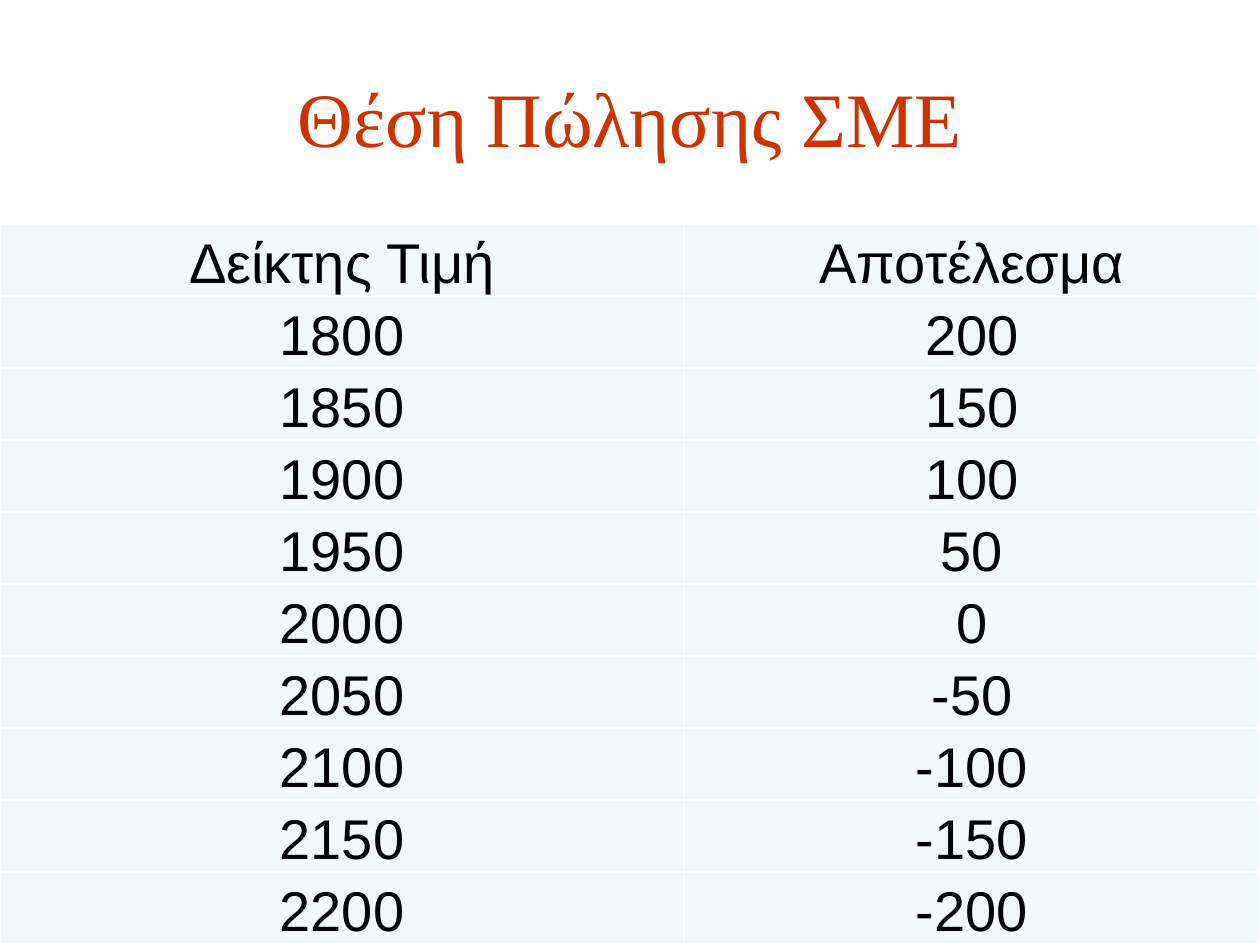
from dataclasses import dataclass

from lxml import etree
from pptx import Presentation
from pptx.dml.color import RGBColor
from pptx.enum.text import MSO_ANCHOR, PP_ALIGN
from pptx.oxml.ns import qn
from pptx.util import Emu, Pt

CENTER = PP_ALIGN.CENTER
MIDDLE = MSO_ANCHOR.MIDDLE
BOTTOM = MSO_ANCHOR.BOTTOM

SCALE = 914400 / 126  # EMU in one px
COLORS = {"title": "CC3300", "text": "000000", "cell": "F3F9FA", "rule": "FFFFFF"}
STRIKE = 2000  # index level at which the short position breaks even


@dataclass
class Style:
    font: str
    size: int
    color: str


@dataclass
class Row:
    index: str
    result: str


HEAD = Style("Times New Roman", 44, "title")
BODY = Style("Arial", 32, "text")
ROWS = [Row("Δείκτης Τιμή", "Αποτέλεσμα")] + [
    Row(str(level), str(STRIKE - level)) for level in range(1800, 2201, 50)
]
COLS = (684, 576)
ROW_H = 72


def px(n: int) -> Emu:
    return Emu(round(n * SCALE))


def rgb(name: str) -> RGBColor:
    return RGBColor.from_string(COLORS[name])


def write(frame, text: str, style: Style) -> None:
    para = frame.paragraphs[0]
    para.alignment = CENTER
    run = para.add_run()
    run.text = text
    run.font.name = style.font
    run.font.size = Pt(style.size)
    run.font.color.rgb = rgb(style.color)


def add_rules(cell) -> None:
    props = cell._tc.get_or_add_tcPr()
    for side in ("lnL", "lnR", "lnT", "lnB"):
        line = etree.SubElement(props, qn(f"a:{side}"), w=str(Pt(1)))
        fill = etree.SubElement(line, qn("a:solidFill"))
        etree.SubElement(fill, qn("a:srgbClr"), val=COLORS["rule"])


def fill_cell(cell, text: str) -> None:
    add_rules(cell)  # borders must come before the fill
    cell.fill.solid()
    cell.fill.fore_color.rgb = rgb("cell")
    cell.margin_left = cell.margin_right = cell.margin_top = px(1)
    cell.margin_bottom = 0
    cell.vertical_anchor = BOTTOM
    write(cell.text_frame, text, BODY)


def add_title(slide, text: str) -> None:
    title = slide.shapes.title
    title.left, title.top = px(63), px(38)
    title.width, title.height = px(1134), px(157)
    title.text_frame.vertical_anchor = MIDDLE
    write(title.text_frame, text, HEAD)


def add_grid(slide, rows: list[Row]) -> None:
    frame = slide.shapes.add_table(
        len(rows), len(COLS), 0, px(224), px(sum(COLS)), px(ROW_H * len(rows))
    )
    table = frame.table
    table.first_row = table.horz_banding = False
    for col, width in zip(table.columns, COLS):
        col.width = px(width)
    for line, row in zip(table.rows, rows):
        line.height = px(ROW_H)
        for cell, text in zip(line.cells, (row.index, row.result)):
            fill_cell(cell, text)


def main() -> None:
    prs = Presentation()
    prs.slide_width, prs.slide_height = px(1260), px(945)
    slide = prs.slides.add_slide(prs.slide_layouts[5])  # title only

    # Heading
    add_title(slide, "Θέση Πώλησης ΣΜΕ")

    # Payoff table
    add_grid(slide, ROWS)

    prs.save("out.pptx")


if __name__ == "__main__":
    main()
